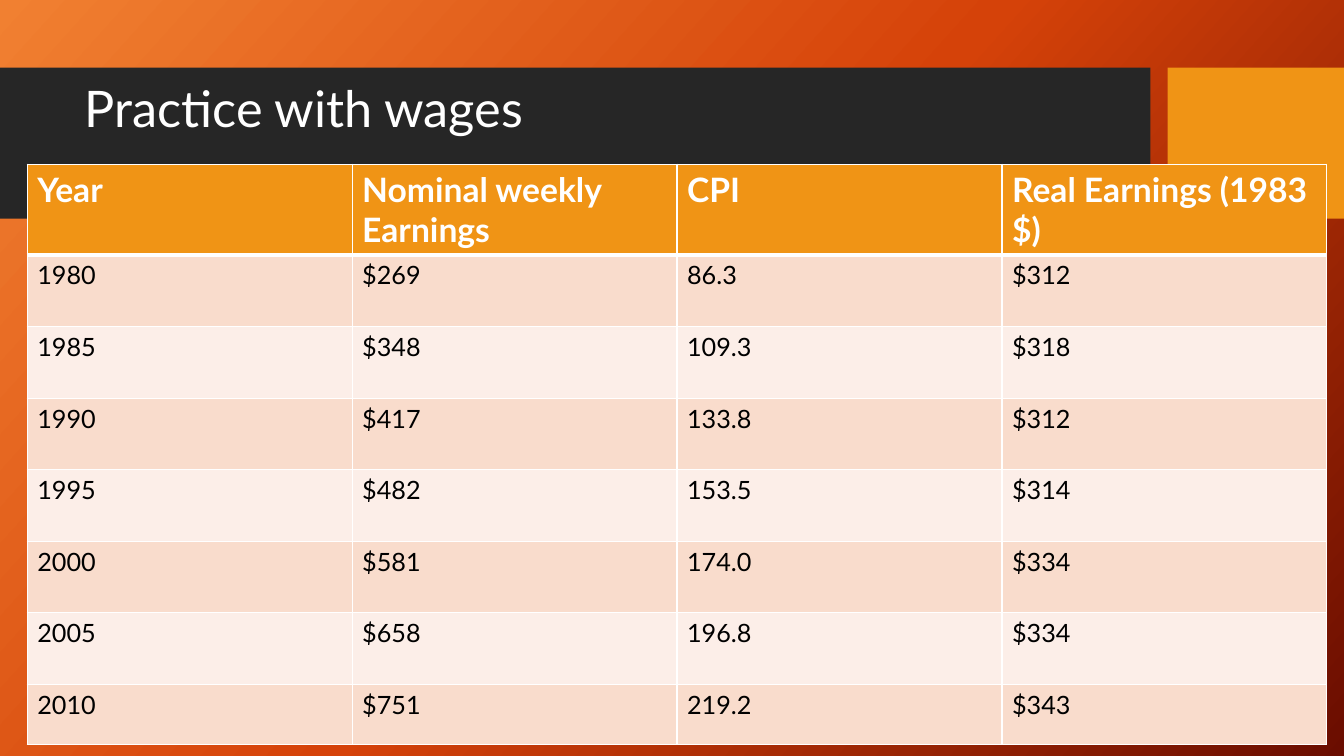
from copy import deepcopy
from dataclasses import dataclass

from pptx import Presentation
from pptx.dml.color import RGBColor as RGB
from pptx.enum.shapes import MSO_SHAPE as Shape
from pptx.enum.text import MSO_ANCHOR as Anchor
from pptx.oxml.ns import qn
from pptx.oxml.xmlchemy import OxmlElement as Element
from pptx.util import Inches, Pt


@dataclass(frozen=True)
class Theme:
    font: str = "Lato"
    white: str = "FFFFFF"
    black: str = "000000"
    charcoal: str = "262626"
    amber: str = "F09415"
    bands: tuple = ("F9DCCC", "FCEEE8")
    backdrop: tuple = ((0, "F18031"), (0.5, "D54209"), (1, "6A0D00"))
    backdrop_angle: int = 42
    title_size: int = 36
    header_size: int = 24
    body_size: int = 18
    thin_rule: int = 1
    thick_rule: int = 3


WAGES = [
    ("Year", "Nominal weekly Earnings", "CPI", "Real Earnings (1983 $)"),
    ("1980", "$269", "86.3", "$312"),
    ("1985", "$348", "109.3", "$318"),
    ("1990", "$417", "133.8", "$312"),
    ("1995", "$482", "153.5", "$314"),
    ("2000", "$581", "174.0", "$334"),
    ("2005", "$658", "196.8", "$334"),
    ("2010", "$751", "219.2", "$343"),
]
ROW_HEIGHTS = [0.9] + [0.71] * 6 + [0.6]


def write(frame, text, *, font, size, color, bold=False, spacing=None):
    """Put one formatted paragraph into a text frame."""
    frame.word_wrap = True
    paragraph = frame.paragraphs[0]
    paragraph.line_spacing = spacing
    run = paragraph.add_run()
    run.text = text
    run.font.name = font
    run.font.size = Pt(size)
    run.font.bold = bold
    run.font.color.rgb = RGB.from_string(color)


class SlideBuilder:
    def __init__(self, slide, theme):
        self.slide = slide
        self.theme = theme

    def backdrop(self):
        fill = self.slide.background.fill
        fill.gradient()
        # python-pptx counts angles counter-clockwise
        fill.gradient_angle = 360 - self.theme.backdrop_angle
        stop_list = next(self.slide.element.iter(qn("a:gsLst")))
        stop_list.append(deepcopy(stop_list[0]))
        for stop, (position, color) in zip(fill.gradient_stops, self.theme.backdrop):
            stop.position = position
            stop.color.rgb = RGB.from_string(color)

    def block(self, left, top, width, height, color):
        block = self.slide.shapes.add_shape(
            Shape.RECTANGLE, Inches(left), Inches(top), Inches(width), Inches(height))
        block.shadow.inherit = False
        block.fill.solid()
        block.fill.fore_color.rgb = RGB.from_string(color)
        block.line.fill.background()

    def title(self, text, left, top, width, height):
        title = self.slide.shapes.add_textbox(
            Inches(left), Inches(top), Inches(width), Inches(height))
        title.text_frame.vertical_anchor = Anchor.MIDDLE
        write(title.text_frame, text, font=self.theme.font,
              size=self.theme.title_size, color=self.theme.white, spacing=0.9)

    def border(self, cell, side, width):
        line = Element(f"a:ln{side}")
        line.set("w", str(Pt(width)))
        solid = Element("a:solidFill")
        color = Element("a:srgbClr")
        color.set("val", self.theme.white)
        solid.append(color)
        line.append(solid)
        cell._tc.get_or_add_tcPr().append(line)

    def table(self, rows, heights, left, top, width):
        theme = self.theme
        table = self.slide.shapes.add_table(
            len(rows), len(rows[0]), Inches(left), Inches(top),
            Inches(width), Inches(sum(heights))).table
        for row, height in zip(table.rows, heights):
            row.height = Inches(height)
        for r, values in enumerate(rows):
            header = r == 0
            for c, value in enumerate(values):
                cell = table.cell(r, c)
                # The heavy rule lies between the header and the first year
                heavy = {0: "B", 1: "T"}.get(r)
                for side in "LRTB":
                    self.border(cell, side,
                                theme.thick_rule if side == heavy else theme.thin_rule)
                cell.fill.solid()
                cell.fill.fore_color.rgb = RGB.from_string(
                    theme.amber if header else theme.bands[(r - 1) % 2])
                write(cell.text_frame, value, font=theme.font, bold=header,
                      size=theme.header_size if header else theme.body_size,
                      color=theme.white if header else theme.black)


def main():
    deck = Presentation()
    deck.slide_width, deck.slide_height = Inches(13.33), Inches(7.5)
    theme = Theme()
    builder = SlideBuilder(deck.slides.add_slide(deck.slide_layouts[6]), theme)

    # Background and title band
    builder.backdrop()
    builder.block(0, 0.67, 11.41, 1.5, theme.charcoal)
    builder.block(11.58, 0.67, 1.75, 1.5, theme.amber)
    builder.title("Practice with wages", 0.74, 0.51, 10.51, 1.18)

    # Wage table
    builder.table(WAGES, ROW_HEIGHTS, 0.27, 1.63, 12.89)

    deck.save("out.pptx")


if __name__ == "__main__":
    main()
